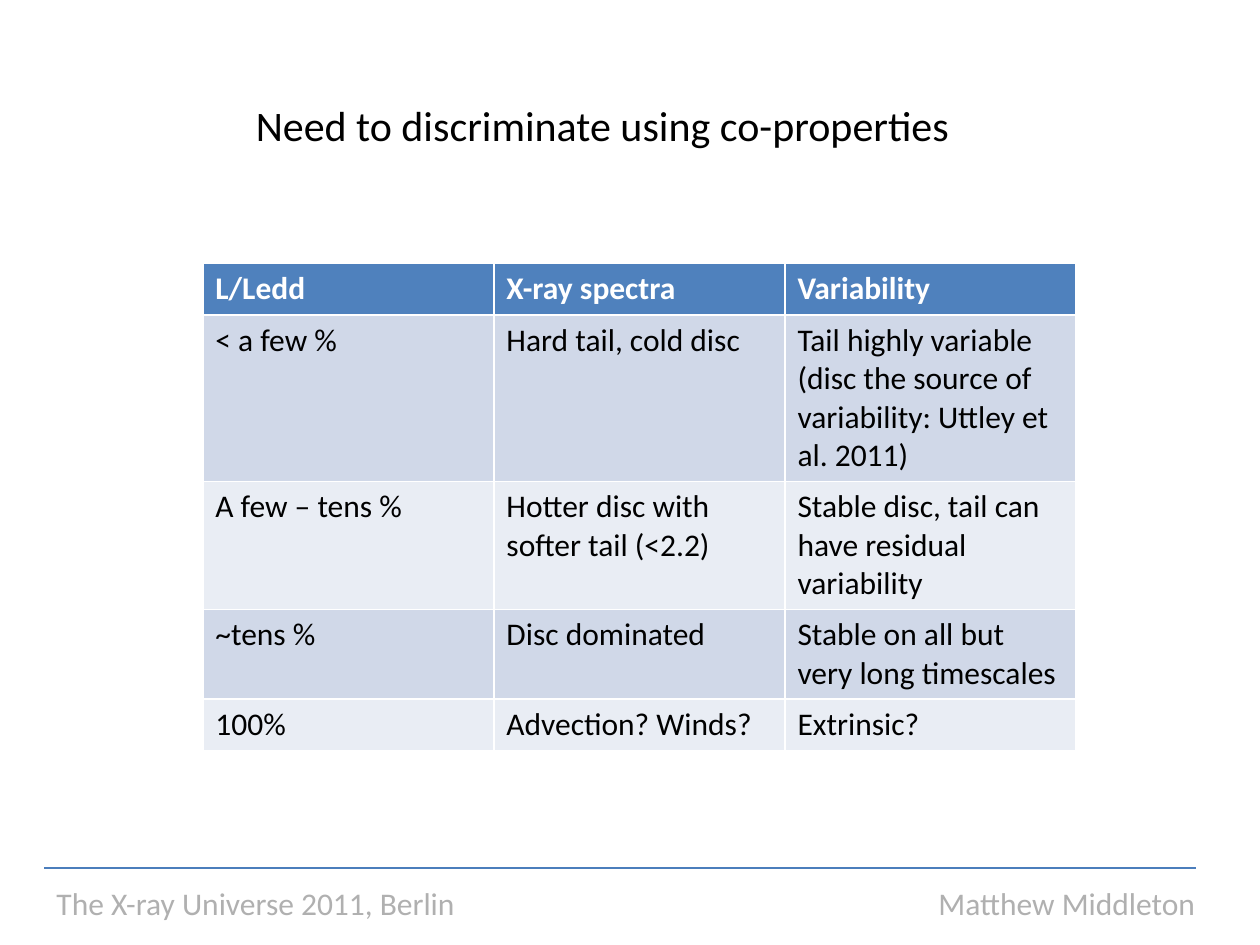
"""Build a slide with a table of spectral and variability properties by luminosity."""
from pptx import Presentation
from pptx.dml.color import RGBColor
from pptx.enum.shapes import MSO_CONNECTOR
from pptx.enum.text import MSO_ANCHOR, MSO_AUTO_SIZE, PP_ALIGN
from pptx.oxml.ns import qn
from pptx.util import Inches, Pt
from lxml import etree

STRAIGHT = MSO_CONNECTOR.STRAIGHT
TOP = MSO_ANCHOR.TOP
LEFT = PP_ALIGN.LEFT
NO_AUTOFIT = MSO_AUTO_SIZE.NONE

BLACK = RGBColor(0x00, 0x00, 0x00)
WHITE = RGBColor(0xFF, 0xFF, 0xFF)
GRAY = RGBColor(0xB0, 0xB0, 0xB0)
HEADER_BLUE = RGBColor(0x4F, 0x81, 0xBD)
BANDS = [RGBColor(0xE9, 0xED, 0xF4), RGBColor(0xD0, 0xD8, 0xE8)]
LINE_BLUE = RGBColor(0x4B, 0x7E, 0xBC)

ROWS = [
    ["L/Ledd", "X-ray spectra", "Variability"],
    ["< a few %", "Hard tail, cold disc",
     "Tail highly variable (disc the source of variability: Uttley et al. 2011)"],
    ["A few – tens %", "Hotter disc with softer tail (<2.2)",
     "Stable disc, tail can have residual variability"],
    ["~tens %", "Disc dominated", "Stable on all but very long timescales"],
    ["100%", "Advection? Winds?", "Extrinsic?"],
]
COLUMN_WIDTH = 2.31
ROW_HEIGHT = 0.41


def write_text(text_frame, text, size, color, bold=False):
    text_frame.text = text
    paragraph = text_frame.paragraphs[0]
    paragraph.alignment = LEFT
    font = paragraph.runs[0].font
    for name, value in {"name": "Calibri", "size": Pt(size), "bold": bold}.items():
        setattr(font, name, value)
    font.color.rgb = color
    return paragraph


presentation = Presentation()
presentation.slide_width = Inches(10)
presentation.slide_height = Inches(7.5)
slide = presentation.slides.add_slide(presentation.slide_layouts[5])

title = slide.shapes.title
title_place = {"left": 1.93, "top": 0.74, "width": 7.72, "height": 0.81}
for name, value in title_place.items():
    setattr(title, name, Inches(value))
title_format = {"vertical_anchor": TOP, "auto_size": NO_AUTOFIT, "word_wrap": True}
for name, value in title_format.items():
    setattr(title.text_frame, name, value)
write_text(title.text_frame, "Need to discriminate using co-properties", 24, BLACK)

column_count = len(ROWS[0])
table = slide.shapes.add_table(
    len(ROWS), column_count, Inches(1.61), Inches(2.09),
    Inches(COLUMN_WIDTH * column_count), Inches(ROW_HEIGHT * len(ROWS)),
).table
for row_index, row in enumerate(ROWS):
    is_header = row_index == 0
    for column_index, text in enumerate(row):
        cell = table.cell(row_index, column_index)
        cell.fill.solid()
        cell.fill.fore_color.rgb = HEADER_BLUE if is_header else BANDS[row_index % 2]
        write_text(cell.text_frame, text, 18, WHITE if is_header else BLACK, is_header)

footer = slide.shapes.add_textbox(Inches(0.35), Inches(6.97), Inches(9.37), Inches(0.4))
footer.text_frame.word_wrap = True
footer_paragraph = write_text(
    footer.text_frame, "The X-ray Universe 2011, Berlin\tMatthew Middleton", 18, GRAY)
properties = footer_paragraph._p.get_or_add_pPr()
tab_list = etree.SubElement(properties, qn("a:tabLst"))
etree.SubElement(tab_list, qn("a:tab"), pos=str(Inches(7)), algn="l")

rule = slide.shapes.add_connector(
    STRAIGHT, Inches(0.35), Inches(6.89), Inches(9.49), Inches(6.89))
rule.line.color.rgb = LINE_BLUE
rule.line.width = Pt(0.75)
etree.SubElement(rule._element.spPr, qn("a:effectLst"))

presentation.save("out.pptx")
